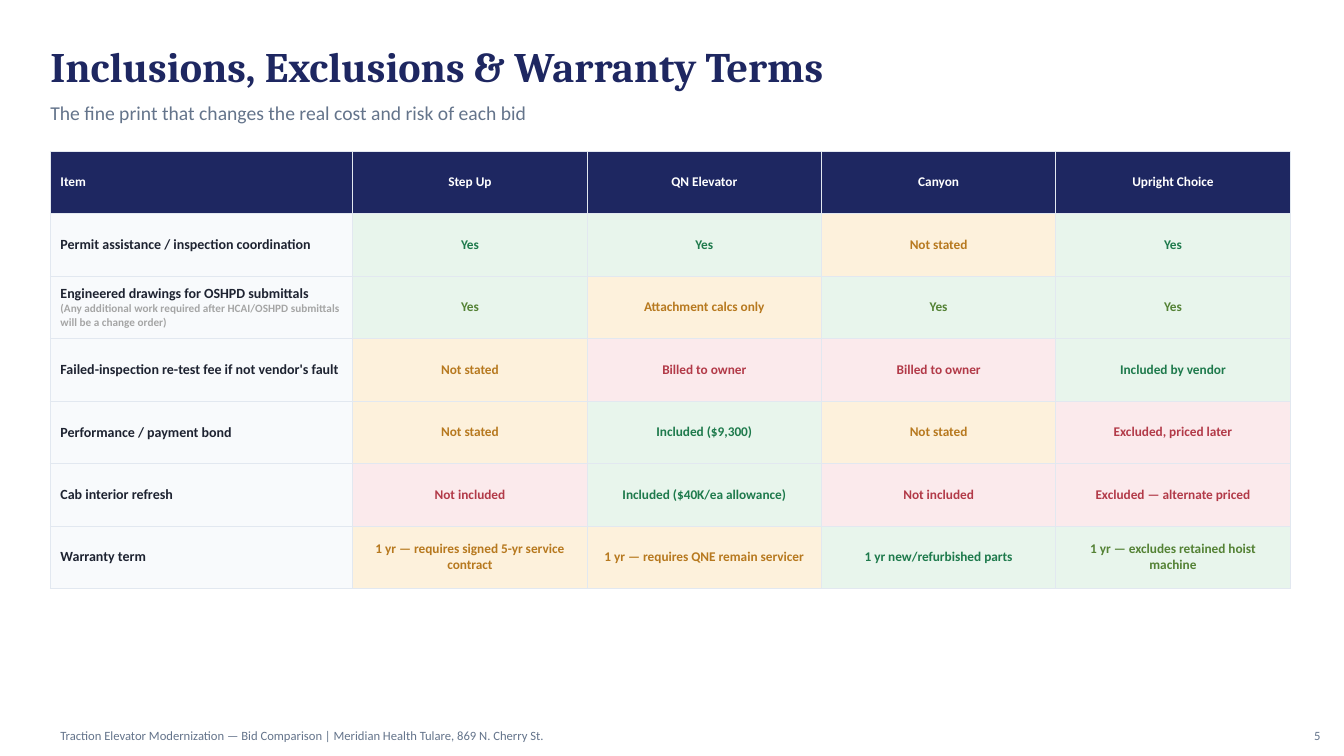
from dataclasses import dataclass

from lxml.etree import SubElement
from pptx import Presentation
from pptx.dml.color import RGBColor
from pptx.enum.text import MSO_ANCHOR as Anchor, PP_ALIGN as Align
from pptx.oxml import parse_xml
from pptx.oxml.ns import nsdecls, qn
from pptx.util import Pt

TITLE = "Inclusions, Exclusions & Warranty Terms"
SUBTITLE = "The fine print that changes the real cost and risk of each bid"
FOOTER = "Traction Elevator Modernization — Bid Comparison | Meridian Health Tulare, 869 N. Cherry St."
PAGE_NUMBER = "5"
HEADERS = ["Item", "Step Up", "QN Elevator", "Canyon", "Upright Choice"]
DRAWINGS_NOTE = "(Any additional work required after HCAI/OSHPD submittals will be a change order)"
TERMS = [
    (["Permit assistance / inspection coordination"],
     [("Yes", "good"), ("Yes", "good"), ("Not stated", "caution"), ("Yes", "good")]),
    (["Engineered drawings for OSHPD submittals", DRAWINGS_NOTE],
     [("Yes", "fair"), ("Attachment calcs only", "caution"), ("Yes", "fair"), ("Yes", "fair")]),
    (["Failed-inspection re-test fee if not vendor's fault"],
     [("Not stated", "caution"), ("Billed to owner", "bad"),
      ("Billed to owner", "bad"), ("Included by vendor", "good")]),
    (["Performance / payment bond"],
     [("Not stated", "caution"), ("Included ($9,300)", "good"),
      ("Not stated", "caution"), ("Excluded, priced later", "bad")]),
    (["Cab interior refresh"],
     [("Not included", "bad"), ("Included ($40K/ea allowance)", "good"),
      ("Not included", "bad"), ("Excluded — alternate priced", "bad")]),
    (["Warranty term"],
     [("1 yr — requires signed 5-yr service contract", "caution"),
      ("1 yr — requires QNE remain servicer", "caution"),
      ("1 yr new/refurbished parts", "good"),
      ("1 yr — excludes retained hoist machine", "fair")]),
]


@dataclass(frozen=True)
class Theme:
    heading: str = "Cambria"
    body: str = "Calibri"
    navy: str = "1E2761"
    slate: str = "64748B"
    white: str = "FFFFFF"
    ink: str = "1E2331"
    note: str = "A5A5A5"
    label_fill: str = "F8FAFC"
    border: str = "E2E8F0"
    title_size: float = 30
    subtitle_size: float = 14
    label_size: float = 10
    value_size: float = 9.5
    footer_size: float = 9
    note_size: float = 8


THEME = Theme()
RATINGS = {
    "good": ("1E7A4C", "E8F5EC"),
    "fair": ("548235", "E8F5EC"),
    "caution": ("B7791F", "FDF1DC"),
    "bad": ("B23A48", "FBEAEC"),
}
LEFT, WIDTH = 36, 885.6
TABLE_TOP, ROW_HEIGHT, ITEM_WIDTH = 108, 44.64, 216
FOOTER_TOP, FOOTER_HEIGHT = 514.8, 21.6


def style(para, size, color, face=THEME.body, bold=False, align=Align.LEFT):
    para.alignment = align
    font = para.font
    font.size, font.name, font.bold = Pt(size), face, bold
    font.color.rgb = RGBColor.from_string(color)


def add_text(page, text, left, top, width, height, size, color, inset=None, **look):
    box = page.shapes.add_textbox(Pt(left), Pt(top), Pt(width), Pt(height))
    frame = box.text_frame
    frame.word_wrap = True
    frame.vertical_anchor = Anchor.MIDDLE
    if inset is not None:
        frame.margin_left = frame.margin_right = Pt(inset)
        frame.margin_top = frame.margin_bottom = Pt(inset)
    frame.text = text
    style(frame.paragraphs[0], size, color, **look)


def fill_cell(cell, lines, fill, align):
    cell.fill.solid()
    cell.fill.fore_color.rgb = RGBColor.from_string(fill)
    cell.vertical_anchor = Anchor.MIDDLE
    cell.text_frame.text = "\n".join(text for text, size, color in lines)
    for para, (text, size, color) in zip(cell.text_frame.paragraphs, lines):
        style(para, size, color, bold=True, align=align)
    properties = cell._tc.get_or_add_tcPr()
    for index, side in enumerate(("lnL", "lnR", "lnT", "lnB")):
        line = parse_xml(f'<a:{side} {nsdecls("a")} w="{Pt(0.75)}"/>')
        solid = SubElement(line, qn("a:solidFill"))
        SubElement(solid, qn("a:srgbClr")).set("val", THEME.border)
        properties.insert(index, line)


def add_terms_table(page):
    row_count, column_count = len(TERMS) + 1, len(HEADERS)
    table = page.shapes.add_table(row_count, column_count, Pt(LEFT), Pt(TABLE_TOP),
                                  Pt(WIDTH), Pt(ROW_HEIGHT * row_count)).table
    table.horz_banding = False
    vendor_width = (WIDTH - ITEM_WIDTH) / (column_count - 1)
    for index, column in enumerate(table.columns):
        column.width = Pt(vendor_width if index else ITEM_WIDTH)
    for row in table.rows:
        row.height = Pt(ROW_HEIGHT)
    for index, name in enumerate(HEADERS):
        fill_cell(table.cell(0, index), [(name, THEME.value_size, THEME.white)],
                  THEME.navy, Align.CENTER if index else Align.LEFT)
    label_looks = [(THEME.label_size, THEME.ink), (THEME.note_size, THEME.note)]
    for row, (labels, answers) in enumerate(TERMS, 1):
        lines = [(text, *look) for text, look in zip(labels, label_looks)]
        fill_cell(table.cell(row, 0), lines, THEME.label_fill, Align.LEFT)
        for column, (text, rating) in enumerate(answers, 1):
            color, fill = RATINGS[rating]
            fill_cell(table.cell(row, column), [(text, THEME.value_size, color)],
                      fill, Align.CENTER)


def main():
    deck = Presentation()
    deck.slide_width, deck.slide_height = Pt(960), Pt(540)
    page = deck.slides.add_slide(deck.slide_layouts[6])
    add_text(page, TITLE, LEFT, 25.2, WIDTH, 43.2, THEME.title_size, THEME.navy,
             inset=0, face=THEME.heading, bold=True)
    add_text(page, SUBTITLE, LEFT, 66.24, WIDTH, 28.8, THEME.subtitle_size, THEME.slate, inset=0)
    add_terms_table(page)
    add_text(page, FOOTER, LEFT, FOOTER_TOP, 756, FOOTER_HEIGHT, THEME.footer_size, THEME.slate)
    add_text(page, PAGE_NUMBER, 907.2, FOOTER_TOP, 43.2, FOOTER_HEIGHT,
             THEME.footer_size, THEME.slate, align=Align.RIGHT)
    deck.save("out.pptx")


if __name__ == "__main__":
    main()
